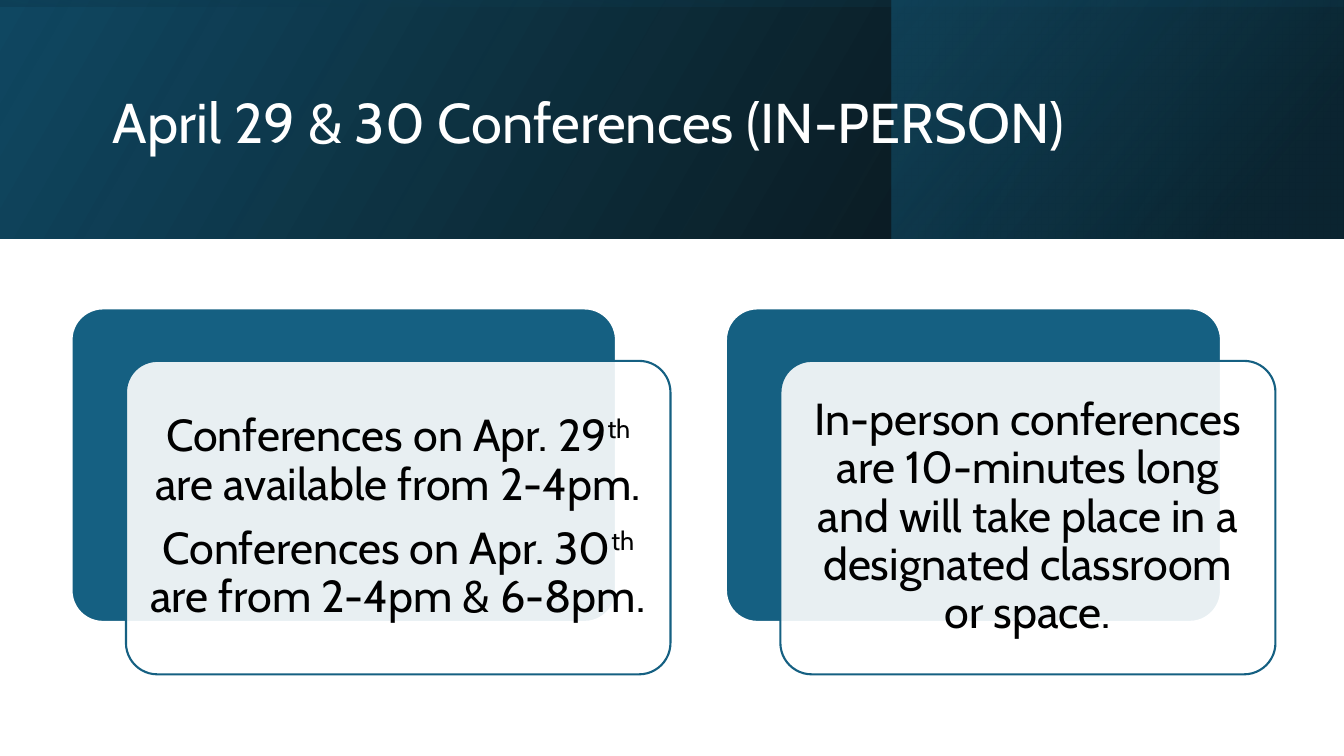
import pptx
import pptx.dml.color
import pptx.enum.shapes
import pptx.enum.text
import pptx.oxml
import pptx.oxml.ns
import pptx.util

Inches = pptx.util.Inches
Pt = pptx.util.Pt
SHAPE = pptx.enum.shapes.MSO_SHAPE
ALIGN = pptx.enum.text.PP_ALIGN

COLORS = {
    "accent": "156082",
    "deep": "104862",
    "night": "0B3041",
    "black": "000000",
    "white": "FFFFFF",
}
TITLE_FONT = {"name": "Cabin", "size": Pt(40)}
BODY_FONT = {"name": "Cabin", "size": Pt(32)}
BODY_PARAGRAPH = {"alignment": ALIGN.CENTER, "line_spacing": 0.9, "space_after": Pt(11)}
MARGINS = {f"margin_{side}": Inches(0.13) for side in ("left", "top", "right", "bottom")}


def rgb(color):
    return pptx.dml.color.RGBColor.from_string(COLORS[color])


def apply_format(target, values):
    for name, value in values.items():
        setattr(target, name, value)


def add_box(slide, kind, box):
    shape = slide.shapes.add_shape(kind, *(Inches(length) for length in box))
    shape.shadow.inherit = False
    return shape


def add_band(slide, box, angle, stops, rotation=0):
    """Add a mirrored rectangle with a translucent gradient."""
    shape = add_box(slide, SHAPE.RECTANGLE, box)
    shape.rotation = rotation
    shape.line.fill.background()
    properties = shape.element.spPr
    properties.xfrm.set("flipH", "1")
    stop_xml = "".join(
        f'<a:gs pos="{position * 1000}"><a:srgbClr val="{COLORS[color]}">'
        f'<a:alpha val="{alpha * 1000}"/></a:srgbClr></a:gs>'
        for position, color, alpha in stops
    )
    gradient = pptx.oxml.parse_xml(
        f'<a:gradFill {pptx.oxml.ns.nsdecls("a")} rotWithShape="1">'
        f'<a:gsLst>{stop_xml}</a:gsLst>'
        f'<a:lin ang="{angle * 60000}" scaled="0"/></a:gradFill>'
    )
    properties.find(pptx.oxml.ns.qn("a:prstGeom")).addnext(gradient)


def add_header(slide, box, title_text):
    left, top, width, height = box
    # Layered gradient bands
    add_band(slide, box, 330, [(0, "black", 96), (100, "deep", 100)])
    add_band(slide, (left + 8.84, top, 4.48, height), 320,
             [(19, "night", 68), (100, "accent", 48)])
    middle = (width - height) / 2
    add_band(slide, (left + middle, top - middle, height, width), 350,
             [(23, "deep", 16), (99, "black", 45)], rotation=270)

    # Title, in front of the bands
    title = slide.shapes.title
    slide.shapes.element.append(title.element)
    apply_format(title, {"left": Inches(left + 1.02), "top": Inches(top + 0.38),
                         "width": Inches(11.28), "height": Inches(1.72)})
    frame = title.text_frame
    frame.text = title_text
    apply_format(frame, {"word_wrap": True,
                         "auto_size": pptx.enum.text.MSO_AUTO_SIZE.NONE,
                         "vertical_anchor": pptx.enum.text.MSO_ANCHOR.MIDDLE})
    paragraph = frame.paragraphs[0]
    apply_format(paragraph, {"alignment": ALIGN.LEFT, "line_spacing": 0.9})
    font = paragraph.runs[0].font
    apply_format(font, TITLE_FONT)
    font.color.rgb = rgb("white")


def add_panel(slide, box, fill, line):
    panel = add_box(slide, SHAPE.ROUNDED_RECTANGLE, box)
    panel.adjustments[0] = 0.1
    panel.fill.solid()
    panel.fill.fore_color.rgb = rgb(fill)
    panel.line.color.rgb = rgb(line)
    panel.line.width = Pt(1.5)
    return panel


def add_card(slide, box, paragraphs):
    """Add a solid panel with a translucent text panel offset over it."""
    left, top, width, height = box
    add_panel(slide, box, "accent", "white")
    front = add_panel(slide, (left + 0.54, top + 0.52, width, height), "white", "accent")
    color = front.element.spPr.find(".//" + pptx.oxml.ns.qn("a:srgbClr"))
    color.append(pptx.oxml.parse_xml(
        f'<a:alpha {pptx.oxml.ns.nsdecls("a")} val="90000"/>'))

    # Text; every second run is a superscript
    frame = front.text_frame
    apply_format(frame, {"word_wrap": True, **MARGINS,
                         "vertical_anchor": pptx.enum.text.MSO_ANCHOR.MIDDLE})
    for index, runs in enumerate(paragraphs):
        paragraph = frame.add_paragraph() if index else frame.paragraphs[0]
        apply_format(paragraph, BODY_PARAGRAPH)
        for position, text in enumerate(runs):
            run = paragraph.add_run()
            run.text = text
            apply_format(run.font, BODY_FONT)
            run.font.color.rgb = rgb("black")
            if position % 2:
                run.font._element.set("baseline", "30000")


def main():
    presentation = pptx.Presentation()
    presentation.slide_width = Inches(13.33)
    presentation.slide_height = Inches(7.5)
    slide = presentation.slides.add_slide(presentation.slide_layouts[5])

    add_header(slide, (0, 0, 13.33, 2.37), "April 29 & 30 Conferences (IN-PERSON)")
    add_card(slide, (0.71, 3.06, 5.4, 3.11), [
        ["Conferences on Apr. 29", "th", " are available from 2-4pm."],
        ["Conferences on Apr. 30", "th", " are from 2-4pm & 6-8pm."],
    ])
    add_card(slide, (7.2, 3.06, 4.91, 3.11), [
        ["In-person conferences are 10-minutes long and will take place "
         "in a designated classroom or space."],
    ])
    presentation.save("out.pptx")


if __name__ == "__main__":
    main()
